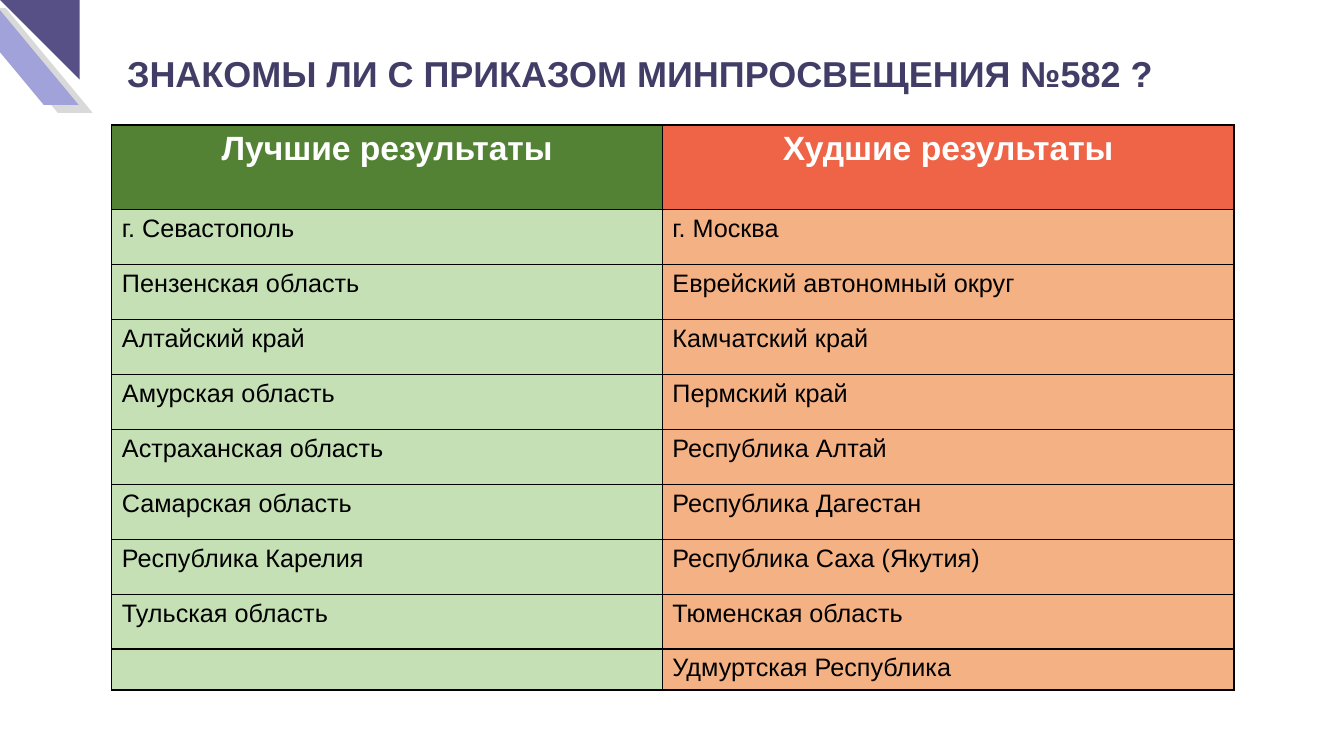
from dataclasses import dataclass

from lxml import etree
from pptx import Presentation
from pptx.dml.color import RGBColor
from pptx.enum.shapes import MSO_SHAPE
from pptx.enum.text import MSO_ANCHOR, PP_ALIGN
from pptx.oxml.ns import qn
from pptx.util import Inches, Pt

PARALLELOGRAM = MSO_SHAPE.PARALLELOGRAM
RIGHT_TRIANGLE = MSO_SHAPE.RIGHT_TRIANGLE
LEFT, CENTER = PP_ALIGN.LEFT, PP_ALIGN.CENTER
MIDDLE = MSO_ANCHOR.MIDDLE


@dataclass
class CornerShape:
    kind: int
    box: tuple[float, float, float, float]
    fill: str
    flips: tuple[str, ...]
    adjustments: tuple[float, ...] = ()


@dataclass
class ResultColumn:
    header: str
    header_fill: str
    body_fill: str
    width: float
    regions: list[str]


TITLE = "ЗНАКОМЫ ЛИ С ПРИКАЗОМ МИНПРОСВЕЩЕНИЯ №582 ?"
TITLE_FORMAT = {"name": "Arial", "size": Pt(25.7), "bold": True}
HEADER_FORMAT = {"name": "Arial", "size": Pt(24), "bold": True}
BODY_FORMAT = {"name": "Arial", "size": Pt(18), "bold": False}

CORNER = [
    CornerShape(PARALLELOGRAM, (-0.29, 0.08, 1.21, 1.04), "D9D9D9", ("flipH",), (0.83,)),
    CornerShape(PARALLELOGRAM, (-0.43, 0, 1.21, 1.04), "A2A2DA", ("flipH",), (0.83,)),
    CornerShape(RIGHT_TRIANGLE, (0, 0, 0.79, 0.79), "565087", ("flipH", "flipV")),
]

COLUMNS = [
    ResultColumn("Лучшие результаты", "548235", "C5E0B4", 5.46, [
        "г. Севастополь", "Пензенская область", "Алтайский край",
        "Амурская область", "Астраханская область", "Самарская область",
        "Республика Карелия", "Тульская область",
    ]),
    ResultColumn("Худшие результаты", "EF6347", "F4B183", 5.67, [
        "г. Москва", "Еврейский автономный округ", "Камчатский край",
        "Пермский край", "Республика Алтай", "Республика Дагестан",
        "Республика Саха (Якутия)", "Тюменская область", "Удмуртская Республика",
    ]),
]
BODY_ROWS = max(len(column.regions) for column in COLUMNS)
HEADER_HEIGHT, LAST_HEIGHT = 0.84, 0.38
ROW_HEIGHT = 4.36 / (BODY_ROWS - 1)


def rgb(value: str) -> RGBColor:
    return RGBColor.from_string(value)


def write(tf, text: str, formats: dict, color: str, align=LEFT) -> None:
    p = tf.paragraphs[0]
    p.alignment = align
    r = p.add_run()
    r.text = text
    for name, value in formats.items():
        setattr(r.font, name, value)
    r.font.color.rgb = rgb(color)


def add_corner_shape(slide, item: CornerShape) -> None:
    sp = slide.shapes.add_shape(item.kind, *(Inches(v) for v in item.box))
    sp.shadow.inherit = False
    sp.fill.solid()
    sp.fill.fore_color.rgb = rgb(item.fill)
    sp.line.fill.background()
    for i, value in enumerate(item.adjustments):
        sp.adjustments[i] = value
    for flip in item.flips:
        sp._element.spPr.find(qn("a:xfrm")).set(flip, "1")


def style_cell(cell, fill: str) -> None:
    tc_pr = cell._tc.get_or_add_tcPr()
    for side in ("a:lnL", "a:lnR", "a:lnT", "a:lnB"):
        ln = etree.SubElement(tc_pr, qn(side), w=str(Pt(1)))
        solid = etree.SubElement(ln, qn("a:solidFill"))
        etree.SubElement(solid, qn("a:srgbClr"), val="000000")
    cell.fill.solid()
    cell.fill.fore_color.rgb = rgb(fill)


def add_results(slide) -> None:
    heights = [HEADER_HEIGHT] + [ROW_HEIGHT] * (BODY_ROWS - 1) + [LAST_HEIGHT]
    width = sum(column.width for column in COLUMNS)
    table = slide.shapes.add_table(
        len(heights), len(COLUMNS), Inches(1.11), Inches(1.24),
        Inches(width), Inches(sum(heights))).table
    for row, height in zip(table.rows, heights):
        row.height = Inches(height)
    for c, column in enumerate(COLUMNS):
        table.columns[c].width = Inches(column.width)
        for r in range(len(heights)):
            style_cell(table.cell(r, c), column.body_fill if r else column.header_fill)
        write(table.cell(0, c).text_frame, column.header, HEADER_FORMAT, "FFFFFF", CENTER)
        for r, region in enumerate(column.regions, start=1):
            write(table.cell(r, c).text_frame, region, BODY_FORMAT, "000000")


def add_title(slide) -> None:
    title = slide.shapes.title
    title.left, title.top = Inches(1.16), Inches(0.46)
    title.width, title.height = Inches(10.47), Inches(0.53)
    tf = title.text_frame
    tf.word_wrap = True
    tf.vertical_anchor = MIDDLE
    write(tf, TITLE, TITLE_FORMAT, "423D67")


def main() -> None:
    prs = Presentation()
    prs.slide_width, prs.slide_height = Inches(13.33), Inches(7.5)
    slide = prs.slides.add_slide(prs.slide_layouts[5])

    # Corner decoration
    for item in CORNER:
        add_corner_shape(slide, item)

    # Title and results table
    add_title(slide)
    add_results(slide)

    prs.save("out.pptx")


if __name__ == "__main__":
    main()
